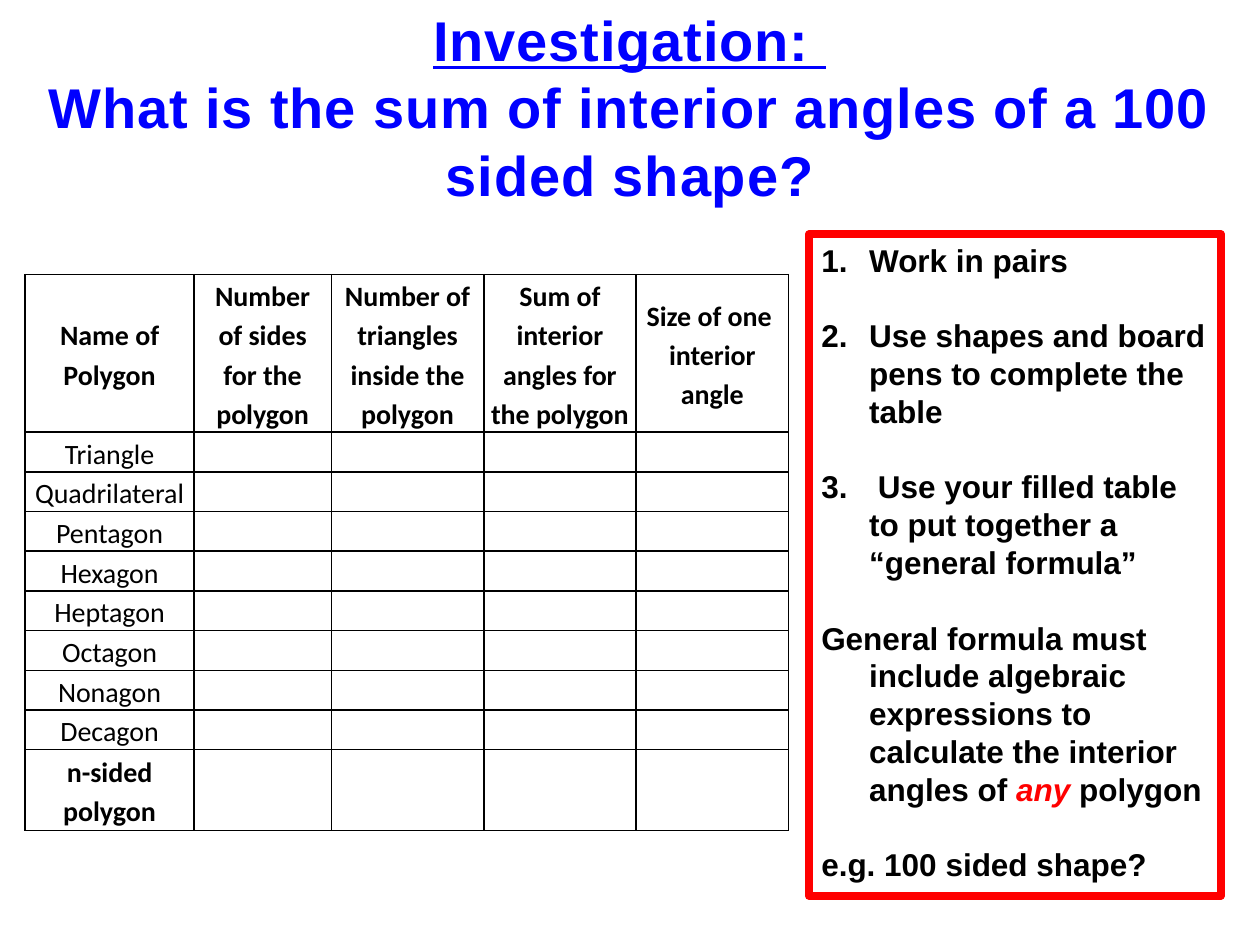
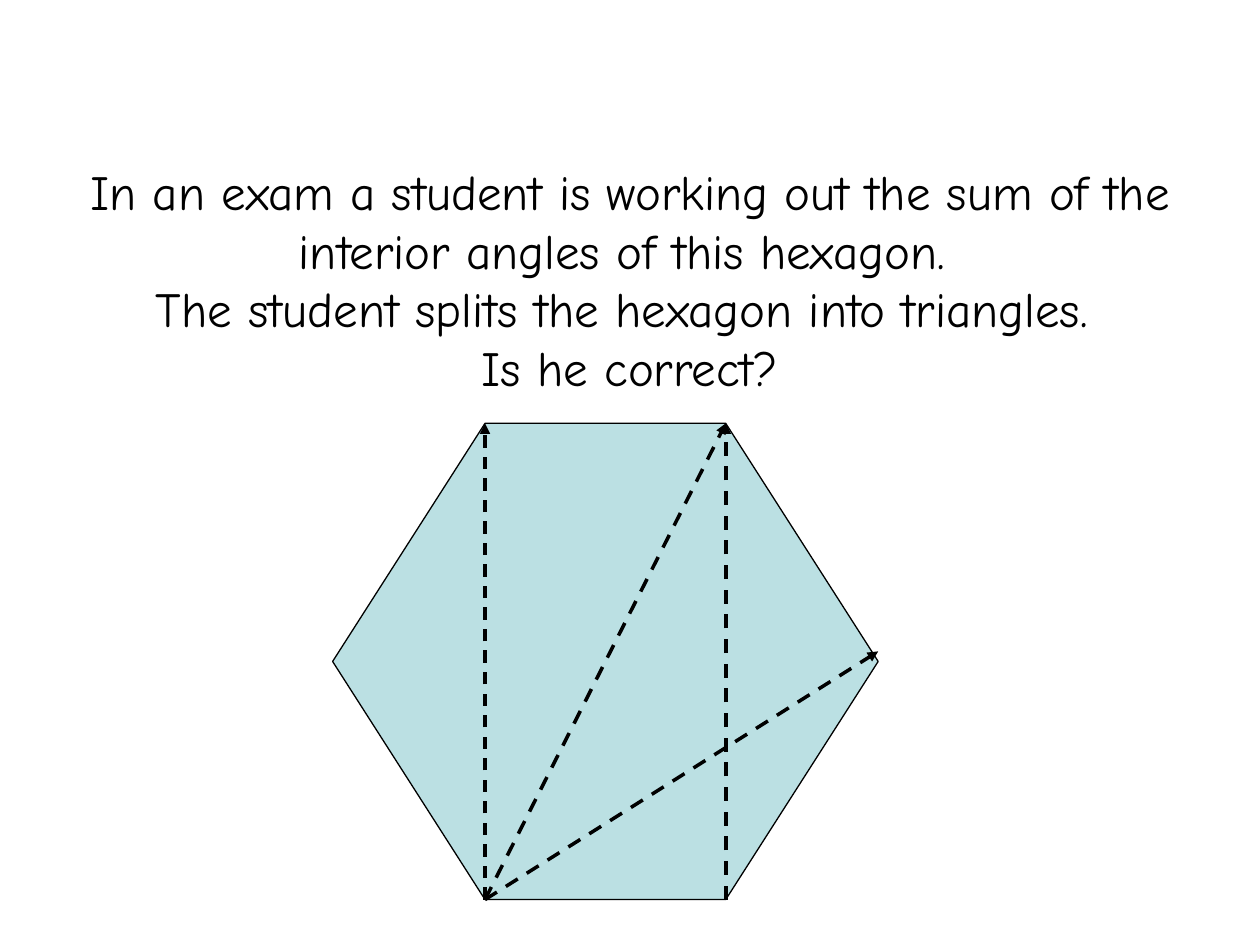
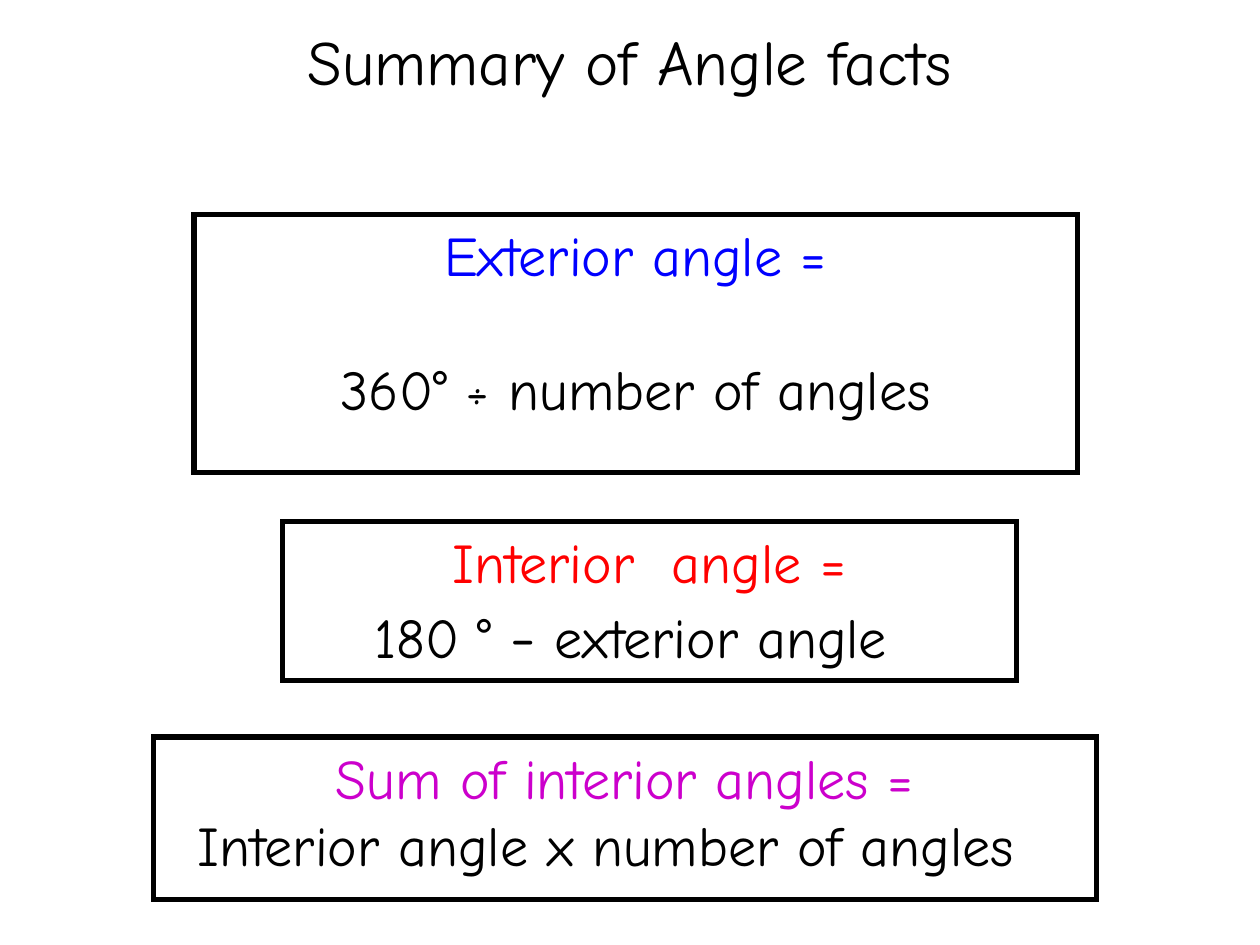
from lxml.etree import SubElement
from pptx import Presentation
from pptx.dml.color import RGBColor
from pptx.enum.dml import MSO_LINE
from pptx.enum.shapes import MSO_CONNECTOR, MSO_SHAPE
from pptx.enum.text import MSO_ANCHOR, PP_ALIGN
from pptx.oxml.ns import qn
from pptx.util import Inches, Pt

COLOURS = {
    "ink": "000000",
    "paper": "FFFFFF",
    "blue": "0000FF",
    "red": "FF0000",
    "purple": "CC00CC",
    "hexagon": "BBE0E3",
}
COLUMNS, ROWS = 100, 75
LINE_BREAK = ("\n", {})


def colour(name):
    return RGBColor.from_string(COLOURS[name])


class Lesson:
    """Builds slides on a grid of COLUMNS by ROWS."""

    hand_font = "Comic Neue"
    plain_font = "Arial"
    table_font = "Calibri"

    def __init__(self):
        self.deck = Presentation()
        self.deck.slide_width, self.deck.slide_height = Inches(10), Inches(7.5)
        self.slide = None

    def new_slide(self):
        self.slide = self.deck.slides.add_slide(self.deck.slide_layouts[6])

    def across(self, columns):
        return round(self.deck.slide_width * columns / COLUMNS)

    def down(self, rows):
        return round(self.deck.slide_height * rows / ROWS)

    def place(self, left, top, width, height):
        return self.across(left), self.down(top), self.across(width), self.down(height)

    def run(self, paragraph, text, font, size, ink="ink", bold=False,
            italic=False, underline=False, spacing=0):
        run = paragraph.add_run()
        run.text = text
        run.font.name, run.font.size = font, Pt(size)
        run.font.color.rgb = colour(ink)
        run.font.bold, run.font.italic = bold, italic
        run.font.underline = underline
        if spacing:
            run._r.get_or_add_rPr().set("spc", str(round(spacing * 100)))

    def paragraphs(self, frame, content, font, size, align=PP_ALIGN.CENTER,
                   gap=0, hanging=0, numbered=0, **style):
        """Write content, a list of paragraphs, each a list of (text, changes)."""
        for index, runs in enumerate(content):
            paragraph = frame.paragraphs[0] if index == 0 else frame.add_paragraph()
            paragraph.alignment = align
            paragraph.space_before = Pt(gap if index else 0)
            if hanging:
                properties = paragraph._p.get_or_add_pPr()
                properties.set("marL", str(self.across(hanging)))
                properties.set("indent", str(-self.across(hanging)))
                if index < numbered:
                    SubElement(properties, qn("a:buAutoNum"), type="arabicPeriod")
            for part in runs:
                if part == LINE_BREAK:
                    paragraph.add_line_break()
                    continue
                text, changes = part
                self.run(paragraph, text, **{"font": font, "size": size, **style, **changes})

    def text(self, place, content, font, size, anchor=MSO_ANCHOR.TOP, wrap=True, **style):
        frame = self.slide.shapes.add_textbox(*self.place(*place)).text_frame
        frame.word_wrap, frame.vertical_anchor = wrap, anchor
        self.paragraphs(frame, content, font, size, **style)

    def shape(self, preset, place, fill=None, line="ink", weight=0.75):
        shape = self.slide.shapes.add_shape(preset, *self.place(*place))
        shape.shadow.inherit = False
        if fill:
            shape.fill.solid()
            shape.fill.fore_color.rgb = colour(fill)
        else:
            shape.fill.background()
        shape.line.color.rgb, shape.line.width = colour(line), Pt(weight)
        return shape

    def panel(self, place, content, font, size, fill=None, line="ink", weight=3,
              corner="miter", **style):
        panel = self.shape(MSO_SHAPE.RECTANGLE, place, fill, line, weight)
        SubElement(panel.line._get_or_add_ln(), qn(f"a:{corner}"))
        frame = panel.text_frame
        frame.word_wrap, frame.vertical_anchor = True, MSO_ANCHOR.TOP
        self.paragraphs(frame, content, font, size, **style)

    def dashed_arrow(self, start, end, weight=2):
        arrow = self.slide.shapes.add_connector(
            MSO_CONNECTOR.STRAIGHT, self.across(start[0]), self.down(start[1]),
            self.across(end[0]), self.down(end[1]))
        arrow.line.color.rgb, arrow.line.width = colour("ink"), Pt(weight)
        arrow.line.dash_style = MSO_LINE.DASH
        SubElement(arrow.line._get_or_add_ln(), qn("a:tailEnd"), type="triangle")
        SubElement(arrow._element.spPr, qn("a:effectLst"))

    def cell_border(self, cell):
        properties = cell._tc.get_or_add_tcPr()
        for side in ("lnL", "lnR", "lnT", "lnB"):
            edge = SubElement(properties, qn(f"a:{side}"), w=str(Pt(1)))
            fill = SubElement(edge, qn("a:solidFill"))
            SubElement(fill, qn("a:srgbClr"), val=COLOURS["ink"])

    def table(self, left, top, widths, heights, headings, names):
        """Draw a worksheet table: headings on top, names down the first column."""
        table = self.slide.shapes.add_table(
            len(heights), len(widths),
            *self.place(left, top, sum(widths), sum(heights))).table
        table.first_row = table.horz_banding = False
        for column, width in zip(table.columns, widths):
            column.width = self.across(width)
        for row, height in zip(table.rows, heights):
            row.height = self.down(height)
        labels = {(0, column): heading for column, heading in enumerate(headings)}
        labels.update({(row, 0): name for row, name in enumerate(names, 1)})
        for row in range(len(heights)):
            for column in range(len(widths)):
                cell = table.cell(row, column)
                cell.margin_left = cell.margin_right = self.across(0.5)
                cell.margin_top = cell.margin_bottom = 0
                cell.vertical_anchor = MSO_ANCHOR.MIDDLE
                self.cell_border(cell)
                cell.fill.background()
                if (row, column) in labels:
                    paragraph = cell.text_frame.paragraphs[0]
                    paragraph.alignment, paragraph.line_spacing = PP_ALIGN.CENTER, 1.15
                    self.run(paragraph, labels[row, column], self.table_font, 16,
                             bold=row in (0, len(heights) - 1))


def investigation(lesson):
    lesson.new_slide()
    lesson.text(
        (0, 2.2, 100, 12.5),
        [[("Investigation: ", {"underline": True}), LINE_BREAK,
          ("What is the sum of interior angles of a 100 sided shape?", {})]],
        lesson.plain_font, 32, MSO_ANCHOR.MIDDLE, ink="blue", bold=True, spacing=0.5)
    headings = ["Name of Polygon", "Number of sides for the polygon",
                "Number of triangles inside the polygon",
                "Sum of interior angles for the polygon",
                "Size of one  interior angle"]
    polygons = ["Triangle", "Quadrilateral", "Pentagon", "Hexagon", "Heptagon",
                "Octagon", "Nonagon", "Decagon", "n-sided polygon"]
    lesson.table(2, 21.8, [13.4, 10.9] + [12.1] * 3, [12.5] + [3.15] * 8 + [6.4],
                 headings, polygons)
    steps = [
        [("Work in pairs", {})],
        [("Use shapes and board pens to complete the table", {})],
        [(" Use your filled table to put together a “general formula”", {})],
        [("General formula must include algebraic expressions to calculate "
          "the interior angles of ", {}),
         ("any", {"ink": "red", "italic": True}), (" polygon", {})],
        [("e.g. 100 sided shape?", {})],
    ]
    lesson.panel((64.2, 18.6, 32.7, 52.5), steps, lesson.plain_font, 18,
                 line="red", weight=4.5, corner="round", align=PP_ALIGN.LEFT,
                 gap=21.6, hanging=3.8, numbered=3, bold=True)


def exam_question(lesson):
    left, top, width, height, slant = 26.4, 33.6, 43.3, 37.8, 0.32
    near, far = left + slant * height, left + width - slant * height
    bottom = top + height
    lesson.new_slide()
    hexagon = lesson.shape(MSO_SHAPE.HEXAGON, (left, top, width, height), "hexagon")
    hexagon.adjustments[0] = slant
    corner = (near, bottom)
    lesson.dashed_arrow(corner, (far, top))
    lesson.dashed_arrow(corner, (left + width, 51.7))
    question = ["In an exam a student is working out the sum of the interior angles "
                "of this hexagon. ",
                "The student splits the hexagon into triangles. ",
                "Is he correct?"]
    lesson.text((0, 12.3, 100, 19.9), [[(line, {})] for line in question],
                lesson.hand_font, 28)
    lesson.dashed_arrow(corner, (near, top), 1.75)
    lesson.dashed_arrow((far, bottom), (far, top))


def summary(lesson):
    lesson.new_slide()
    lesson.text((5, 1.3, 90, 12.5), [[("Summary of Angle facts", {})]],
                lesson.hand_font, 36, wrap=False)
    facts = [
        ((15.4, 17, 70.1, 20.5), "Exterior angle =", "blue", 38.5,
         [("360° ÷ number of angles", {})]),
        ((22.4, 41.4, 58.3, 12.6), "Interior  angle =", "red", 0,
         [("180 ° ", {}), ("-", {"size": 36}), (" exterior angle  ", {})]),
        ((12.2, 58.5, 74.8, 12.9), "Sum of interior angles =", "purple", 0,
         [("Interior angle x number of angles  ", {})]),
    ]
    for place, name, ink, gap, rule in facts:
        lesson.panel(place, [[(name, {"ink": ink})], rule], lesson.hand_font, 32,
                     fill="paper", gap=gap)


def main():
    lesson = Lesson()
    investigation(lesson)
    exam_question(lesson)
    summary(lesson)
    lesson.deck.save("out.pptx")


if __name__ == "__main__":
    main()
